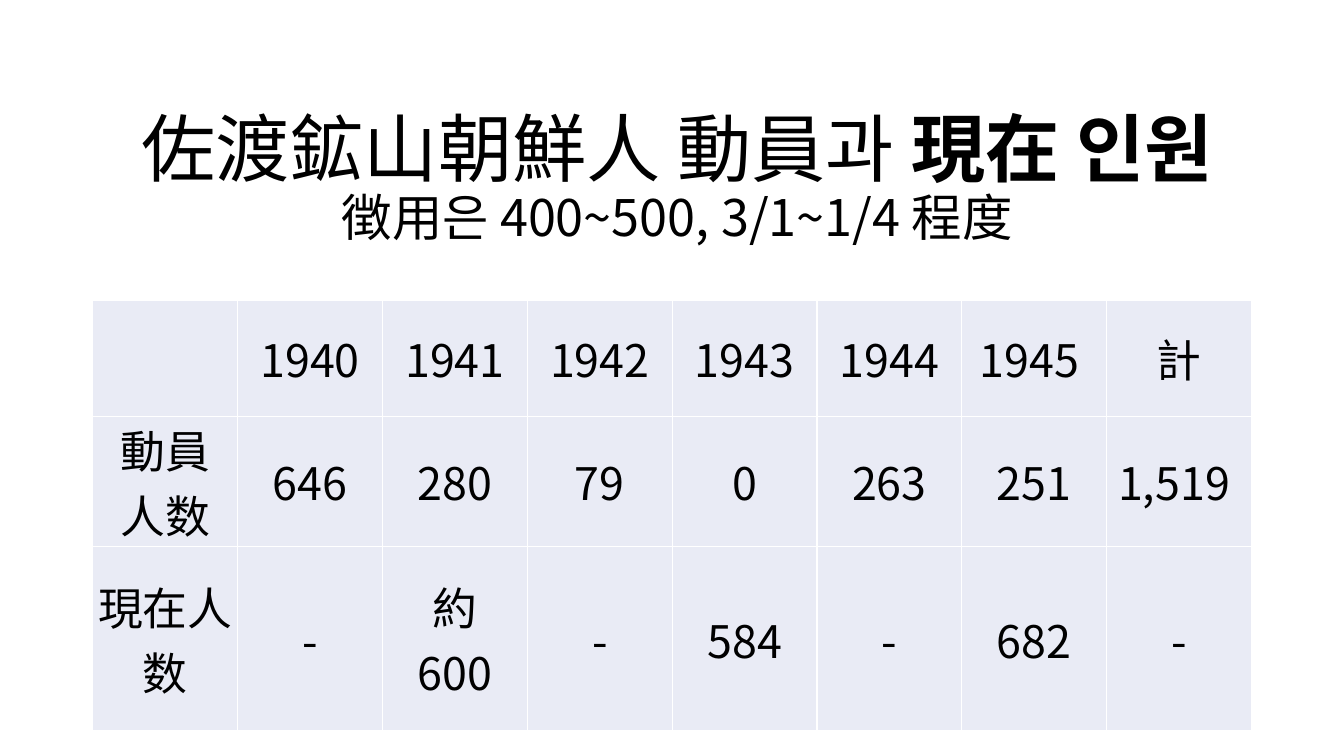
from dataclasses import dataclass

from lxml.etree import SubElement
from pptx import Presentation
from pptx.dml.color import RGBColor
from pptx.enum.text import MSO_ANCHOR as Anchor, MSO_AUTO_SIZE as AutoSize, PP_ALIGN as Align
from pptx.oxml.ns import qn
from pptx.table import Table
from pptx.text.text import TextFrame
from pptx.util import Cm, Pt


@dataclass(frozen=True)
class Theme:
    japanese: str = "Noto Sans CJK JP"
    korean: str = "Noto Sans CJK KR"
    ink: RGBColor = RGBColor(0, 0, 0)
    cell: RGBColor = RGBColor(0xE9, 0xEB, 0xF5)
    title_size: int = 53
    subtitle_size: int = 36
    table_size: int = 32


THEME = Theme()


@dataclass(frozen=True)
class Span:
    """A stretch of evenly formatted text; break_after starts a new line behind it."""
    text: str
    typeface: str = THEME.korean
    size: int = THEME.table_size
    bold: bool = False
    break_after: bool = False


TITLE = [
    Span("佐渡鉱山朝鮮人 動員과 ", THEME.japanese, THEME.title_size),
    Span("現在 인원", size=THEME.title_size, bold=True, break_after=True),
    Span("徴用은 400~500, 3/1~1/4 程度", THEME.japanese, THEME.subtitle_size),
]
MOBILISED = [Span("動員", THEME.japanese, break_after=True), Span("人数", THEME.japanese)]
ABOUT_600 = [Span("約", THEME.japanese, break_after=True), Span("600")]
ROWS = [
    ["", "1940", "1941", "1942", "1943", "1944", "1945 ", "計"],
    [MOBILISED, "646", "280", "79", "0", "263", "251", "1,519 "],
    ["現在人数", "-", ABOUT_600, "-", "584", "-", "682", "-"],
]
COLUMN_WIDTH = Cm(3.65)
ROW_HEIGHTS = [Cm(2.92), Cm(2.92), Cm(4.65)]


def write_spans(frame: TextFrame, spans: list[Span], line_spacing: float = 1.0) -> None:
    paragraph = frame.paragraphs[0]
    paragraph.alignment = Align.CENTER
    paragraph.line_spacing = line_spacing
    for span in spans:
        run = paragraph.add_run()
        run.text = span.text
        font_format = {"name": span.typeface, "size": Pt(span.size), "bold": span.bold}
        for name, value in font_format.items():
            setattr(run.font, name, value)
        run.font.color.rgb = THEME.ink
        SubElement(run.font._element, qn("a:ea"), typeface=span.typeface)
        if span.break_after:
            paragraph.add_line_break()


def fill_table(table: Table) -> None:
    table.first_row = table.horz_banding = False
    for column in table.columns:
        column.width = COLUMN_WIDTH
    for row, height, contents in zip(table.rows, ROW_HEIGHTS, ROWS):
        row.height = height
        for cell, content in zip(row.cells, contents):
            cell.fill.solid()
            cell.fill.fore_color.rgb = THEME.cell
            cell.vertical_anchor = Anchor.MIDDLE
            for side in ("left", "right", "top", "bottom"):
                setattr(cell, f"margin_{side}", 0)
            if content:
                spans = [Span(content)] if isinstance(content, str) else content
                write_spans(cell.text_frame, spans)


def main() -> None:
    presentation = Presentation()
    presentation.slide_width, presentation.slide_height = Cm(33.87), Cm(19.05)
    slide = presentation.slides.add_slide(presentation.slide_layouts[5])

    title = slide.shapes.title
    title_place = {"left": Cm(0.91), "top": Cm(1.02), "width": Cm(32.31), "height": Cm(7.04)}
    for name, value in title_place.items():
        setattr(title, name, value)
    frame_format = {"word_wrap": True, "auto_size": AutoSize.NONE, "vertical_anchor": Anchor.MIDDLE}
    for name, value in frame_format.items():
        setattr(title.text_frame, name, value)
    write_spans(title.text_frame, TITLE, line_spacing=0.9)

    column_count = len(ROWS[0])
    table_frame = slide.shapes.add_table(
        len(ROWS), column_count, Cm(2.34), Cm(7.57), COLUMN_WIDTH * column_count, sum(ROW_HEIGHTS))
    fill_table(table_frame.table)

    presentation.save("out.pptx")


if __name__ == "__main__":
    main()
